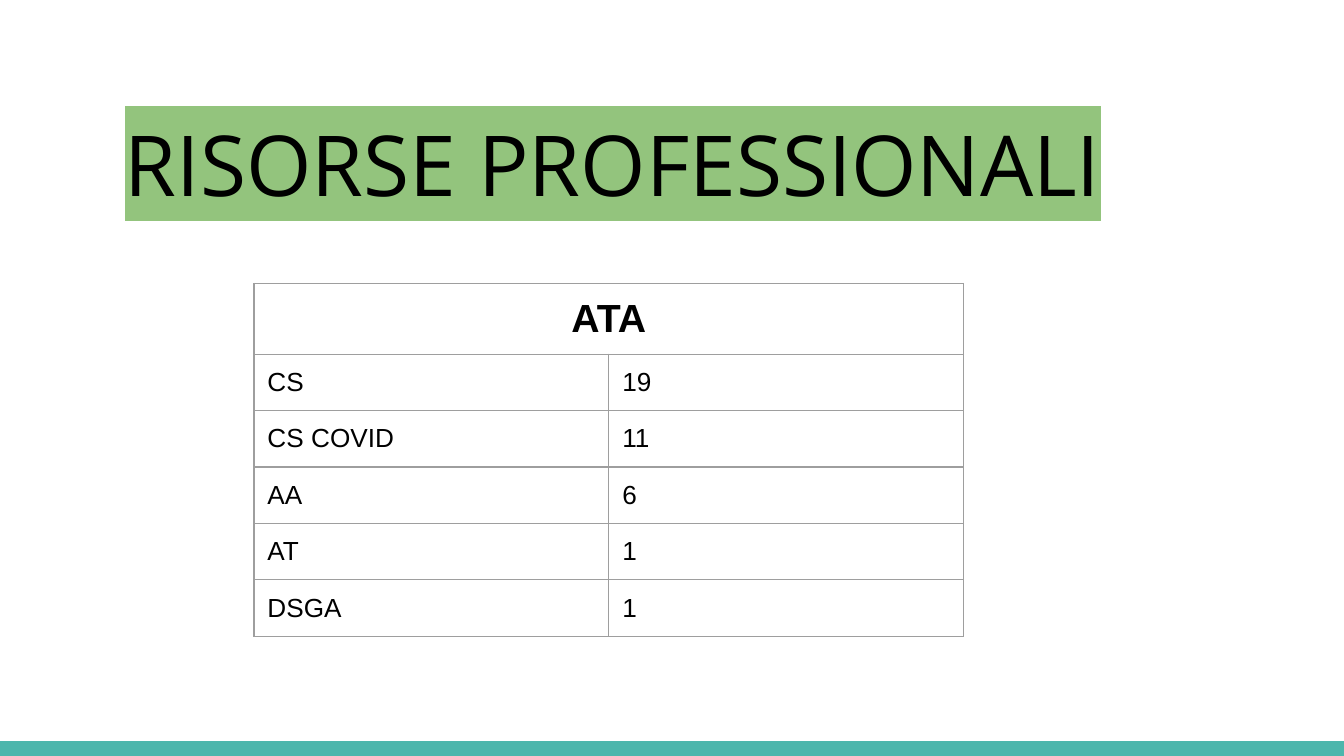
"""Build the slide on ATA staff numbers."""
from lxml import etree
from pptx import Presentation
from pptx.dml.color import RGBColor
from pptx.enum import shapes, text
from pptx.oxml import ns
from pptx.util import Inches, Pt

BLACK = RGBColor(0x00, 0x00, 0x00)
GREEN = RGBColor(0x93, 0xC4, 0x7D)
TEAL = RGBColor(0x4D, 0xB6, 0xAC)
GREY = RGBColor(0x9E, 0x9E, 0x9E)

SLIDE_WIDTH = Inches(10)
SLIDE_HEIGHT = SLIDE_WIDTH * 9 // 16
HEADING = "ATA"
STAFF = [("CS", 19), ("CS COVID", 11), ("AA", 6), ("AT", 1), ("DSGA", 1)]
COLUMN_WIDTH, ROW_HEIGHT = 2.64, 0.42
MARGINS = {f"margin_{side}": Inches(0.1) for side in ("left", "top", "right", "bottom")}


def set_attributes(target, values):
    """Apply a dict of format values to an object."""
    for name, value in values.items():
        setattr(target, name, value)


def write(paragraph, wording, font, size, bold=False, align=text.PP_ALIGN.LEFT):
    """Put one formatted run in a paragraph and return it."""
    paragraph.alignment = align
    run = paragraph.add_run()
    run.text = wording
    run.font.color.rgb = BLACK
    set_attributes(run.font, {"name": font, "size": Pt(size), "bold": bold})
    return run


def add_color(parent, tag, color):
    """Append a colour-holding element to a parent and return it."""
    holder = etree.SubElement(parent, ns.qn(tag))
    etree.SubElement(holder, ns.qn("a:srgbClr"), val=str(color))
    return holder


def highlight(run, color):
    """Mark the background of a run."""
    properties = run.font._element
    marker = add_color(properties, "a:highlight", color)
    properties.find(ns.qn("a:solidFill")).addnext(marker)


def add_title(slide, wording):
    """Place and format the highlighted title."""
    title = slide.shapes.title
    set_attributes(title, {"left": Inches(0.83), "top": Inches(0.74),
                           "width": Inches(8.15), "height": Inches(0.94)})
    set_attributes(title.text_frame, {
        **MARGINS, "word_wrap": True, "auto_size": text.MSO_AUTO_SIZE.NONE,
        "vertical_anchor": text.MSO_ANCHOR.MIDDLE})
    highlight(write(title.text_frame.paragraphs[0], wording, "Open Sans", 45), GREEN)


def add_footer_band(slide):
    """Draw the band along the bottom edge."""
    height = Inches(0.11)
    band = slide.shapes.add_shape(
        shapes.MSO_SHAPE.RECTANGLE, 0, SLIDE_HEIGHT - height, SLIDE_WIDTH, height)
    band.shadow.inherit = False
    band.fill.solid()
    band.fill.fore_color.rgb = TEAL
    band.line.fill.background()


def format_cell(cell):
    """Give a cell its margins, clear fill and grey borders."""
    set_attributes(cell, {**MARGINS, "vertical_anchor": text.MSO_ANCHOR.TOP})
    cell.fill.background()
    properties = cell._tc.get_or_add_tcPr()
    for position, side in enumerate("LRTB"):
        border = etree.Element(ns.qn(f"a:ln{side}"), w=str(Pt(0.75)))
        add_color(border, "a:solidFill", GREY)
        properties.insert(position, border)


def add_staff_table(slide):
    """Add the table of staff numbers under a merged heading."""
    row_count = len(STAFF) + 1
    table = slide.shapes.add_table(
        row_count, 2, Inches(1.89), Inches(2.11),
        Inches(2 * COLUMN_WIDTH), Inches(row_count * ROW_HEIGHT)).table
    set_attributes(table, {"first_row": False, "horz_banding": False})
    for cell in table.iter_cells():
        format_cell(cell)
    heading = table.cell(0, 0)
    heading.merge(table.cell(0, 1))
    write(heading.text_frame.paragraphs[0], HEADING, "Arial", 21, True, text.PP_ALIGN.CENTER)
    for row, entry in enumerate(STAFF, 1):
        for column, value in enumerate(entry):
            write(table.cell(row, column).text_frame.paragraphs[0], str(value), "Arial", 14)


def main():
    """Build and save the presentation."""
    deck = Presentation()
    set_attributes(deck, {"slide_width": SLIDE_WIDTH, "slide_height": SLIDE_HEIGHT})
    slide = deck.slides.add_slide(deck.slide_layouts[5])
    add_footer_band(slide)
    add_title(slide, "RISORSE PROFESSIONALI")
    add_staff_table(slide)
    deck.save("out.pptx")


if __name__ == "__main__":
    main()
